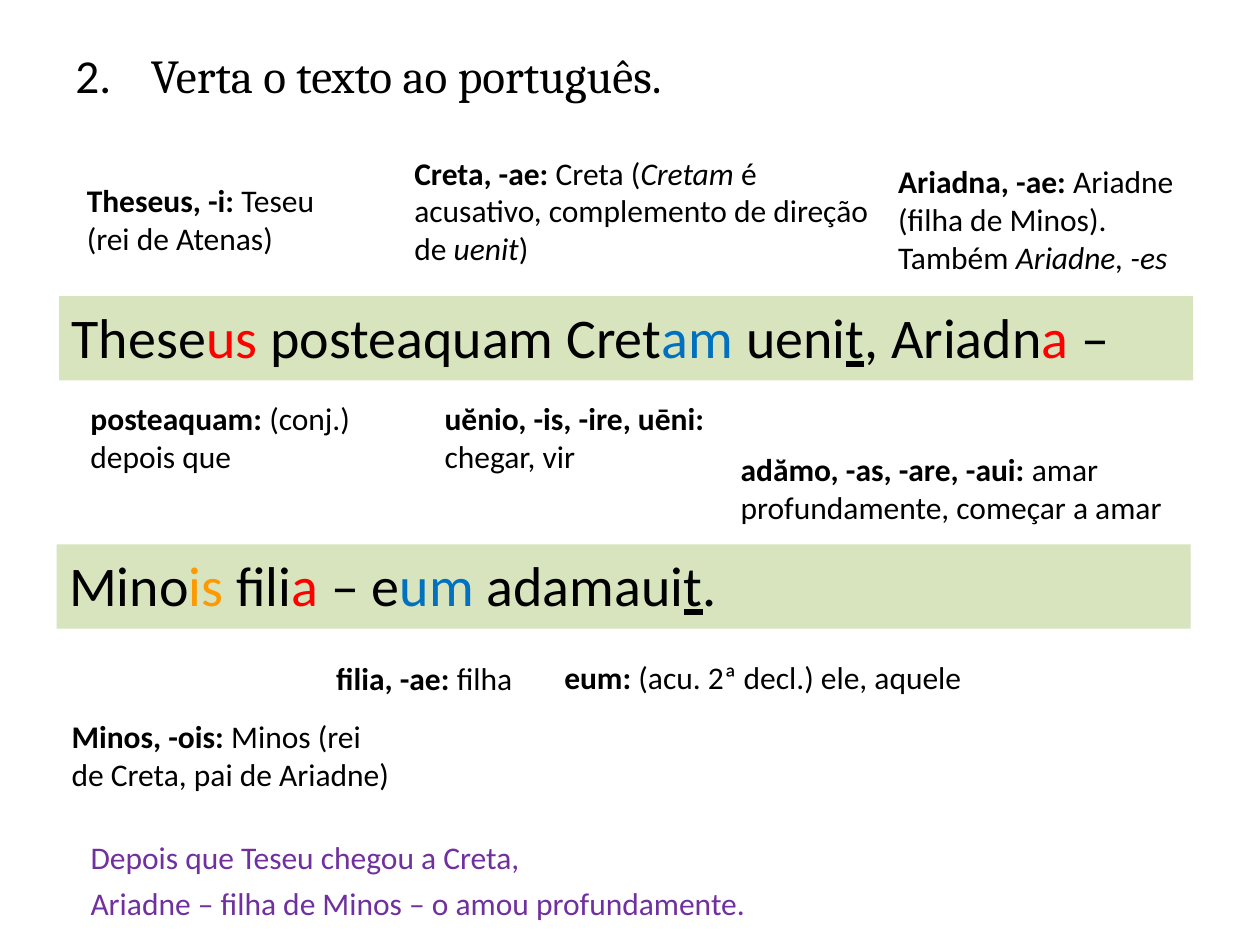
from pptx import Presentation
from pptx.dml.color import RGBColor
from pptx.enum.shapes import MSO_SHAPE
from pptx.enum.text import MSO_ANCHOR, PP_ALIGN
from pptx.util import Inches, Pt

COLORS = {
    "text": "000000",
    "band": "D7E4BD",
    "nominative": "FF0000",
    "accusative": "0070C0",
    "genitive": "FF9900",
    "translation": "7030A0",
}


def write(shape, runs, size, color="text"):
    """Fill a shape with (text, style) runs; a style is bold, italic, underline or a colour key."""
    frame = shape.text_frame
    frame.word_wrap = True
    paragraph = frame.paragraphs[0]
    paragraph.alignment = PP_ALIGN.LEFT
    paragraph.font.size = Pt(size)
    paragraph.font.name = "Calibri"
    paragraph.font.color.rgb = RGBColor.from_string(COLORS[color])
    for text, style in runs:
        run = paragraph.add_run()
        run.text = text
        if style in COLORS:
            run.font.color.rgb = RGBColor.from_string(COLORS[style])
        elif style:
            setattr(run.font, style, True)
    return paragraph


def add_text(left, top, width, height, runs, size=18, color="text"):
    box = slide.shapes.add_textbox(Inches(left), Inches(top), Inches(width), Inches(height))
    return box, write(box, runs, size, color)


prs = Presentation()
prs.slide_width = Inches(10)
prs.slide_height = Inches(7.5)
slide = prs.slides.add_slide(prs.slide_layouts[6])

# Exercise heading, with the number hanging left of the text
heading, heading_line = add_text(
    0.5, 0.08, 9, 1.02, [("2. \t", None), ("Verta o texto ao português.", None)], size=27)
heading.text_frame.vertical_anchor = MSO_ANCHOR.MIDDLE
heading_line.runs[1].font.name = "Cambria"
indent = heading_line._p.get_or_add_pPr()
indent.set("marL", str(Inches(0.6)))
indent.set("indent", str(-Inches(0.6)))

# Latin sentence, with case endings in colour
latin_lines = [
    (0.47, 2.35, [
        ("These", None), ("us ", "nominative"), ("posteaquam Cret", None),
        ("am", "accusative"), (" ueni", None), ("t", "underline"),
        (", Ariadn", None), ("a", "nominative"), (" –", None)]),
    (0.45, 4.32, [
        ("Mino", None), ("is", "genitive"), (" fili", None), ("a", "nominative"),
        (" – e", None), ("um ", "accusative"), ("adamaui", None),
        ("t", "underline"), (".", None)]),
]
for left, top, runs in latin_lines:
    band = slide.shapes.add_shape(
        MSO_SHAPE.RECTANGLE, Inches(left), Inches(top), Inches(9), Inches(0.67))
    band.shadow.inherit = False
    band.fill.solid()
    band.fill.fore_color.rgb = RGBColor.from_string(COLORS["band"])
    band.line.fill.background()
    band.text_frame.vertical_anchor = MSO_ANCHOR.TOP
    write(band, runs, 32)

# Glossary: position, bold headword, then the meaning
glossary = [
    (0.59, 1.39, 2.28, 0.71, "Theseus, -i: ", [("Teseu (rei de Atenas)", None)]),
    (3.19, 1.17, 3.83, 1.01, "Creta, -ae:", [
        (" Creta (", None), ("Cretam ", "italic"),
        ("é acusativo, complemento de direção de ", None),
        ("uenit", "italic"), (")", None)]),
    (7.03, 1.24, 2.73, 1.01, "Ariadna, -ae: ", [
        ("Ariadne (filha de Minos). Também ", None), ("Ariadne, -es", "italic")]),
    (0.62, 3.12, 2.66, 0.71, "posteaquam:", [(" (conj.) depois que", None)]),
    (3.43, 3.12, 2.28, 0.71, "uĕnio, -is, -ire, uēni: ", [("chegar, vir", None)]),
    (5.78, 3.52, 3.59, 0.71, "adămo, -as, -are, -aui: ", [
        ("amar profundamente, começar a amar", None)]),
    (2.57, 5.18, 1.72, 0.4, "filia, -ae: ", [("filha", None)]),
    (4.38, 5.17, 3.85, 0.4, "eum: ", [("(acu. 2ª decl.) ele, aquele", None)]),
    (0.47, 5.64, 2.73, 0.71, "Minos, -ois: ", [
        ("Minos (rei de Creta, pai de Ariadne)", None)]),
]
for left, top, width, height, headword, meaning in glossary:
    add_text(left, top, width, height, [(headword, "bold")] + meaning)

# Portuguese translation
translation = [
    (6.6, "Depois que Teseu chegou a Creta,"),
    (6.97, "Ariadne – filha de Minos – o amou profundamente."),
]
for top, sentence in translation:
    add_text(0.62, top, 8.98, 0.4, [(sentence, None)], color="translation")

prs.save("out.pptx")
